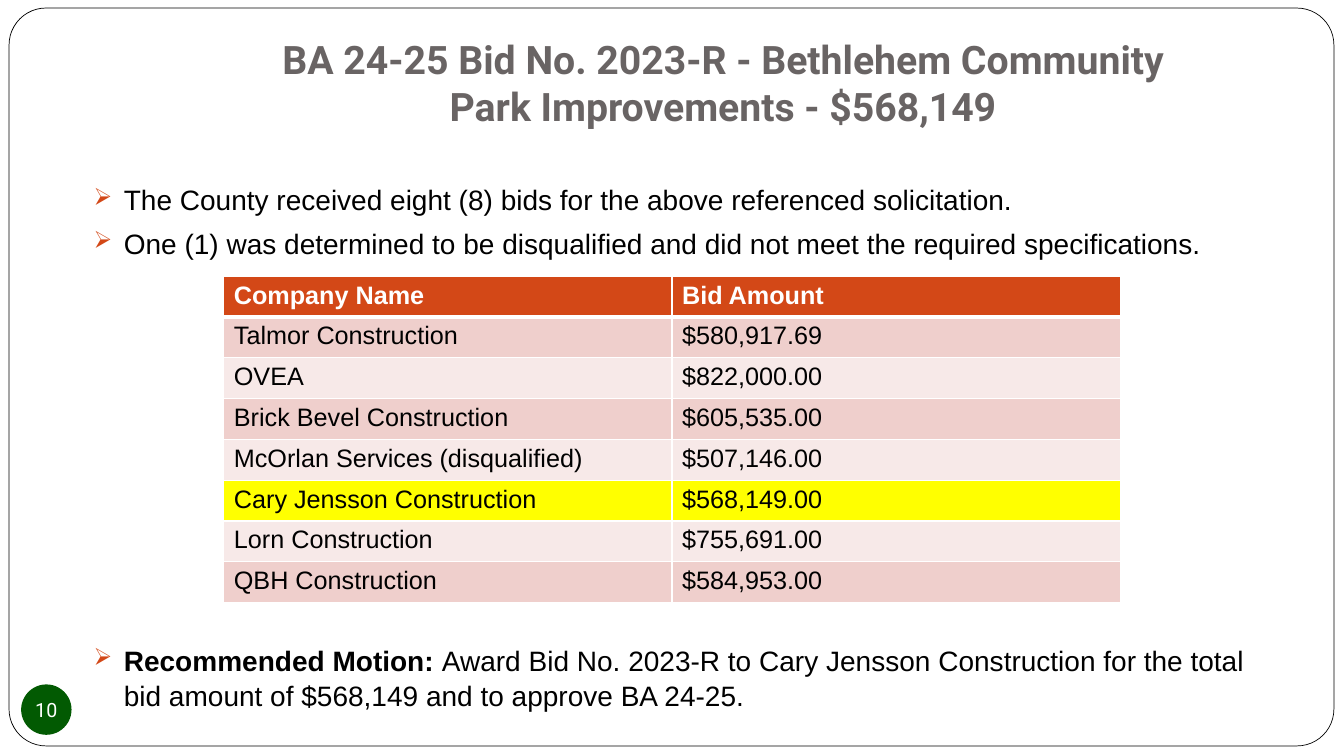
"""Build the bid award slide for the community park improvements."""
import pptx
import pptx.dml.color
import pptx.enum.shapes
import pptx.enum.text
import pptx.oxml
import pptx.oxml.ns
import pptx.util

Inches = pptx.util.Inches
ALIGN = pptx.enum.text.PP_ALIGN
ANCHOR = pptx.enum.text.MSO_ANCHOR
SHAPE = pptx.enum.shapes.MSO_SHAPE
THEME = {
    "heading": "Roboto", "body": "Arial",
    "title_size": 28, "body_size": 20, "table_size": 18, "number_size": 14,
    "white": "FFFFFF", "black": "000000", "gray": "696464", "accent": "D34817",
    "green": "025A02", "band_dark": "EFCFCC", "band_light": "F7E9E8",
    "highlight": "FFFF00",
}


def color(name):
    return pptx.dml.color.RGBColor.from_string(THEME[name])


def style(r, face, size, ink, bold=False):
    r.font.name = THEME[face]
    r.font.size = pptx.util.Pt(THEME[size])
    r.font.color.rgb = color(ink)
    r.font.bold = bold


prs = pptx.Presentation()
prs.slide_width, prs.slide_height = Inches(13.33), Inches(7.5)
s = prs.slides.add_slide(prs.slide_layouts[5])

frame = s.shapes.add_shape(SHAPE.ROUNDED_RECTANGLE, Inches(0.09), Inches(0.08),
                           Inches(13.14), Inches(7.32))
frame.adjustments[0] = 0.05
frame.shadow.inherit = False
frame.fill.solid()
frame.fill.fore_color.rgb = color("white")
frame.line.color.rgb = color("black")
frame.line.width = pptx.util.Pt(0.5)

title = s.shapes.title
frame._element.addnext(title._element)
title.left, title.top = Inches(2.67), Inches(0.3)
title.width, title.height = Inches(9), Inches(1.25)
tf = title.text_frame
tf.text = "BA 24-25 Bid No. 2023-R - Bethlehem Community Park Improvements - $568,149"
tf.word_wrap = True
tf.auto_size = pptx.enum.text.MSO_AUTO_SIZE.NONE
tf.vertical_anchor = ANCHOR.TOP
tf.margin_bottom = Inches(0.1)
tf.paragraphs[0].alignment = ALIGN.CENTER
style(tf.paragraphs[0].runs[0], "heading", "title_size", "gray", True)

winner = "Cary Jensson Construction"
findings = [
    [("The County received eight (8) bids for the above referenced solicitation.", False)],
    [("One (1) was determined to be disqualified and did not meet the required "
      "specifications.", False)],
]
motion = [
    [("Recommended Motion: ", True),
     (f"Award Bid No. 2023-R to {winner} for the total bid amount of $568,149 "
      "and to approve BA 24-25.", False)],
]
for top, paragraphs in ((1.75, findings), (6.32, motion)):
    tf = s.shapes.add_textbox(Inches(0.83), Inches(top), Inches(11.67), Inches(0.95)).text_frame
    tf.word_wrap = True
    for i, runs in enumerate(paragraphs):
        p = tf.add_paragraph() if i else tf.paragraphs[0]
        p.line_spacing = 1.04
        p.space_after = pptx.util.Pt(6)
        pPr = p._p.get_or_add_pPr()
        pPr.set("marL", str(Inches(0.3)))
        pPr.set("indent", str(-Inches(0.3)))
        for xml in (f'<a:buClr %s><a:srgbClr val="{THEME["accent"]}"/></a:buClr>',
                    '<a:buSzPct %s val="85000"/>', '<a:buChar %s char="➢"/>'):
            pPr.append(pptx.oxml.parse_xml(xml % pptx.oxml.ns.nsdecls("a")))
        for text, bold in runs:
            r = p.add_run()
            r.text = text
            style(r, "body", "body_size", "black", bold)

badge = s.shapes.add_shape(SHAPE.OVAL, Inches(0.21), Inches(6.79), Inches(0.5), Inches(0.5))
badge.shadow.inherit = False
badge.fill.solid()
badge.fill.fore_color.rgb = color("green")
badge.line.fill.background()
tf = badge.text_frame
tf.text = "10"
tf.word_wrap = False
tf.vertical_anchor = ANCHOR.MIDDLE
tf.margin_left = tf.margin_top = tf.margin_right = tf.margin_bottom = 0
tf.paragraphs[0].alignment = ALIGN.CENTER
style(tf.paragraphs[0].runs[0], "heading", "number_size", "white")

bids = [
    ("Company Name", "Bid Amount"),
    ("Talmor Construction", "$580,917.69"),
    ("OVEA", "$822,000.00"),
    ("Brick Bevel Construction", "$605,535.00"),
    ("McOrlan Services (disqualified)", "$507,146.00"),
    (winner, "$568,149.00"),
    ("Lorn Construction", "$755,691.00"),
    ("QBH Construction", "$584,953.00"),
]
table = s.shapes.add_table(len(bids), 2, Inches(2.22), Inches(2.74),
                           Inches(8.89), Inches(3.24)).table
for i, bid in enumerate(bids):
    header = i == 0
    if header:
        fill = "accent"
    elif bid[0] == winner:
        fill = "highlight"
    else:
        fill = "band_dark" if i % 2 else "band_light"
    for j, text in enumerate(bid):
        cell = table.cell(i, j)
        cell.text_frame.text = text
        style(cell.text_frame.paragraphs[0].runs[0], "body", "table_size",
              "white" if header else "black", header)
        tcPr = cell._tc.get_or_add_tcPr()
        for side in "LRTB":
            thick = (header and side == "B") or (i == 1 and side == "T")
            width = pptx.util.Pt(3 if thick else 1)
            tcPr.append(pptx.oxml.parse_xml(
                f'<a:ln{side} {pptx.oxml.ns.nsdecls("a")} w="{width}"><a:solidFill>'
                f'<a:srgbClr val="{THEME["white"]}"/></a:solidFill></a:ln{side}>'))
        cell.fill.solid()
        cell.fill.fore_color.rgb = color(fill)

prs.save("out.pptx")
